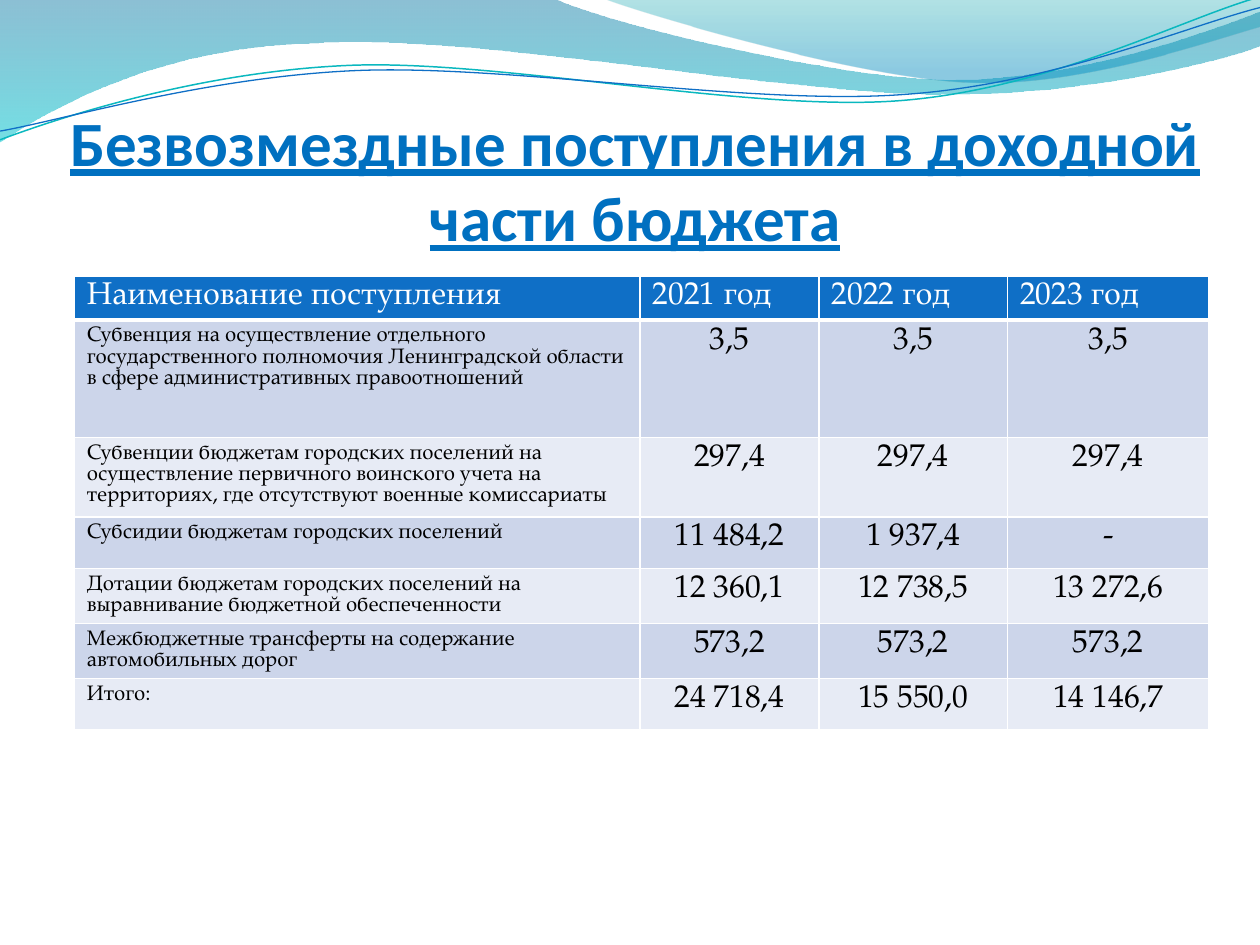
from lxml import etree
from pptx import Presentation
from pptx.dml.color import RGBColor
from pptx.enum.text import MSO_ANCHOR, MSO_AUTO_SIZE, PP_ALIGN
from pptx.oxml.ns import qn
from pptx.util import Pt

LEFT, CENTER = PP_ALIGN.LEFT, PP_ALIGN.CENTER
BOTTOM, NO_FIT = MSO_ANCHOR.BOTTOM, MSO_AUTO_SIZE.NONE

WHITE = RGBColor(0xFF, 0xFF, 0xFF)
BLACK = RGBColor(0x00, 0x00, 0x00)
TITLE_BLUE = RGBColor(0x00, 0x70, 0xC0)
HEADER_BLUE = RGBColor(0x0F, 0x6F, 0xC6)
TEAL = RGBColor(0x0A, 0xB8, 0xBF)
BANDS = (RGBColor(0xCC, 0xD5, 0xEA), RGBColor(0xE7, 0xEB, 0xF5))
DEEP_BLUE, AQUA = RGBColor(0x00, 0x74, 0xA1), RGBColor(0x00, 0xC6, 0xCF)
SEA_GREEN, SKY_BLUE = RGBColor(0x00, 0xA1, 0xA9), RGBColor(0x00, 0x8B, 0xBF)

TITLE = "Безвозмездные поступления в доходной части бюджета"
ROWS = [
    ("Наименование поступления", "2021 год", "2022 год", "2023 год"),
    ("Субвенция на осуществление отдельного  государственного полномочия "
     "Ленинградской области в сфере административных правоотношений",
     "3,5", "3,5", "3,5"),
    ("Субвенции бюджетам городских поселений на осуществление первичного воинского "
     "учета на территориях, где отсутствуют военные комиссариаты",
     "297,4", "297,4", "297,4"),
    ("Субсидии бюджетам городских поселений", "11 484,2", "1 937,4", "-"),
    ("Дотации бюджетам городских поселений на выравнивание бюджетной обеспеченности",
     "12 360,1", "12 738,5", "13 272,6"),
    ("Межбюджетные трансферты на содержание автомобильных дорог",
     "573,2", "573,2", "573,2"),
    ("Итого:", "24 718,4", "15 550,0", "14 146,7"),
]
COLUMN_WIDTHS = (323.3, 102.2, 107.8, 115.2)
ROW_HEIGHTS = (11.5, 67, 45.4, 29.5, 29.5, 29.5, 29.5)  # rows grow with their text
TABLE_LEFT, TABLE_TOP, TABLE_HEIGHT = 42.5, 157.6, 276.5

# Outlines in points: a pair is a straight step, a six-tuple a Bézier step.
# Gradient stops: position, colour, opacity in percent.
WAVES = [
    ([(0, 0), (316.8, -0.7), (342.7, 12.2, 478.1, 45.4, 545.8, 45.4),
      (614.2, 45.4, 689.8, 18.7, 720, 6.5), (720.7, 25.9),
      (707.8, 31.7, 626.4, 54.7, 537.1, 54),
      (447.8, 54, 275, 20.2, 185, 24.5), (92.9, 25.9, 33.1, 59.8, -0.7, 81.4),
      (0, 0)],
     [(0, DEEP_BLUE, 45), (1, AQUA, 55)]),
    ([(344.9, -0.7), (366.5, 7.9, 491, 44.6, 553.7, 46.8),
      (616.3, 49.7, 691.9, 23, 720, 15.1), (720, 0), (344.9, -0.7)],
     [(0, SEA_GREEN, 30), (0.8, SKY_BLUE, 45)]),
]
STRANDS = [
    ([(0, 79.9), (34.6, 67, 113.8, 41, 199.4, 37.4),
      (284.4, 33.8, 427, 64.1, 513.4, 57.6),
      (599.8, 51.1, 675.4, 10.8, 718.6, -1.4)], TEAL, 0.85),
    ([(0, 74.9), (33.8, 69.1, 118.1, 43.9, 203.8, 40.3),
      (290.2, 36.7, 429.8, 60.5, 516.2, 54),
      (601.9, 48.2, 677.5, 15.1, 720, 4.3)], HEADER_BLUE, 0.75),
]


def draw_outline(page, steps, close):
    """Build the outline through all points, then join each Bézier triple."""
    points = [(Pt(step[i]), Pt(step[i + 1]))
              for step in steps for i in range(0, len(step), 2)]
    builder = page.shapes.build_freeform(*points[0])
    builder.add_line_segments(points[1:], close=close)
    shape = builder.convert_to_shape()
    shape.shadow.inherit = False
    segments = iter(list(shape._element.spPr.iter(qn("a:lnTo"))))
    for step in steps[1:]:
        first = next(segments)
        if len(step) == 6:
            curve = etree.Element(qn("a:cubicBezTo"))
            first.addprevious(curve)
            for segment in (first, next(segments), next(segments)):
                curve.append(segment[0])
                segment.getparent().remove(segment)
    return shape


def draw_wave(page, steps, stops):
    shape = draw_outline(page, steps, True)
    shape.line.fill.background()
    shape.fill.gradient()
    shape.fill.gradient_angle = 270
    for stop, (position, color, _) in zip(shape.fill.gradient_stops, stops):
        stop.position = position
        stop.color.rgb = color
    for node, (_, _, opacity) in zip(shape._element.spPr.iter(qn("a:srgbClr")), stops):
        etree.SubElement(node, qn("a:alpha"), val=str(opacity * 1000))


def draw_strand(page, steps, color, width):
    shape = draw_outline(page, steps, False)
    shape.fill.background()
    shape.line.color.rgb = color
    shape.line.width = Pt(width)


def set_borders(cell, color, width, bottom_width):
    properties = cell._tc.get_or_add_tcPr()
    for side in ("lnL", "lnR", "lnT", "lnB"):
        points = bottom_width if side == "lnB" else width
        line = etree.SubElement(properties, qn("a:" + side), w=str(Pt(points)))
        fill = etree.SubElement(line, qn("a:solidFill"))
        etree.SubElement(fill, qn("a:srgbClr"), val=str(color))


def add_title(page):
    title = page.shapes.title
    page.shapes._spTree.append(title._element)  # in front of the waves
    title.left, title.top, title.width, title.height = Pt(36), Pt(55.4), Pt(653.8), Pt(90)
    frame = title.text_frame
    frame.text = TITLE
    frame.word_wrap = True
    frame.auto_size = NO_FIT
    frame.vertical_anchor = BOTTOM
    frame.margin_left = frame.margin_right = frame.margin_bottom = 0
    frame.margin_top = Pt(3.6)
    paragraph = frame.paragraphs[0]
    paragraph.alignment = CENTER
    font = paragraph.font
    font.name, font.size, font.bold, font.underline = "Calibri", Pt(36), True, True
    font.color.rgb = TITLE_BLUE


def add_income_table(page):
    holder = page.shapes.add_table(
        len(ROWS), len(COLUMN_WIDTHS), Pt(TABLE_LEFT), Pt(TABLE_TOP),
        Pt(sum(COLUMN_WIDTHS)), Pt(TABLE_HEIGHT))
    table = holder.table
    for column, width in zip(table.columns, COLUMN_WIDTHS):
        column.width = Pt(width)
    for row, height in zip(table.rows, ROW_HEIGHTS):
        row.height = Pt(height)
    holder.height = Pt(TABLE_HEIGHT)
    for i, texts in enumerate(ROWS):
        for j, text in enumerate(texts):
            header, label = i == 0, j == 0
            cell = table.cell(i, j)
            set_borders(cell, WHITE, 1, 3 if header else 1)
            cell.fill.solid()
            cell.fill.fore_color.rgb = HEADER_BLUE if header else BANDS[(i - 1) % 2]
            cell.text = text
            paragraph = cell.text_frame.paragraphs[0]
            paragraph.alignment = LEFT if header or label else CENTER
            font = paragraph.font
            font.name, font.bold = "TeX Gyre Pagella", False
            font.size = Pt(12 if label and not header else 18)
            font.color.rgb = WHITE if header else BLACK


def main():
    deck = Presentation()
    deck.slide_width, deck.slide_height = Pt(720), Pt(540)
    page = deck.slides.add_slide(deck.slide_layouts.get_by_name("Title Only"))
    for steps, stops in WAVES:
        draw_wave(page, steps, stops)
    for steps, color, width in STRANDS:
        draw_strand(page, steps, color, width)
    add_title(page)
    add_income_table(page)
    deck.save("out.pptx")


if __name__ == "__main__":
    main()
